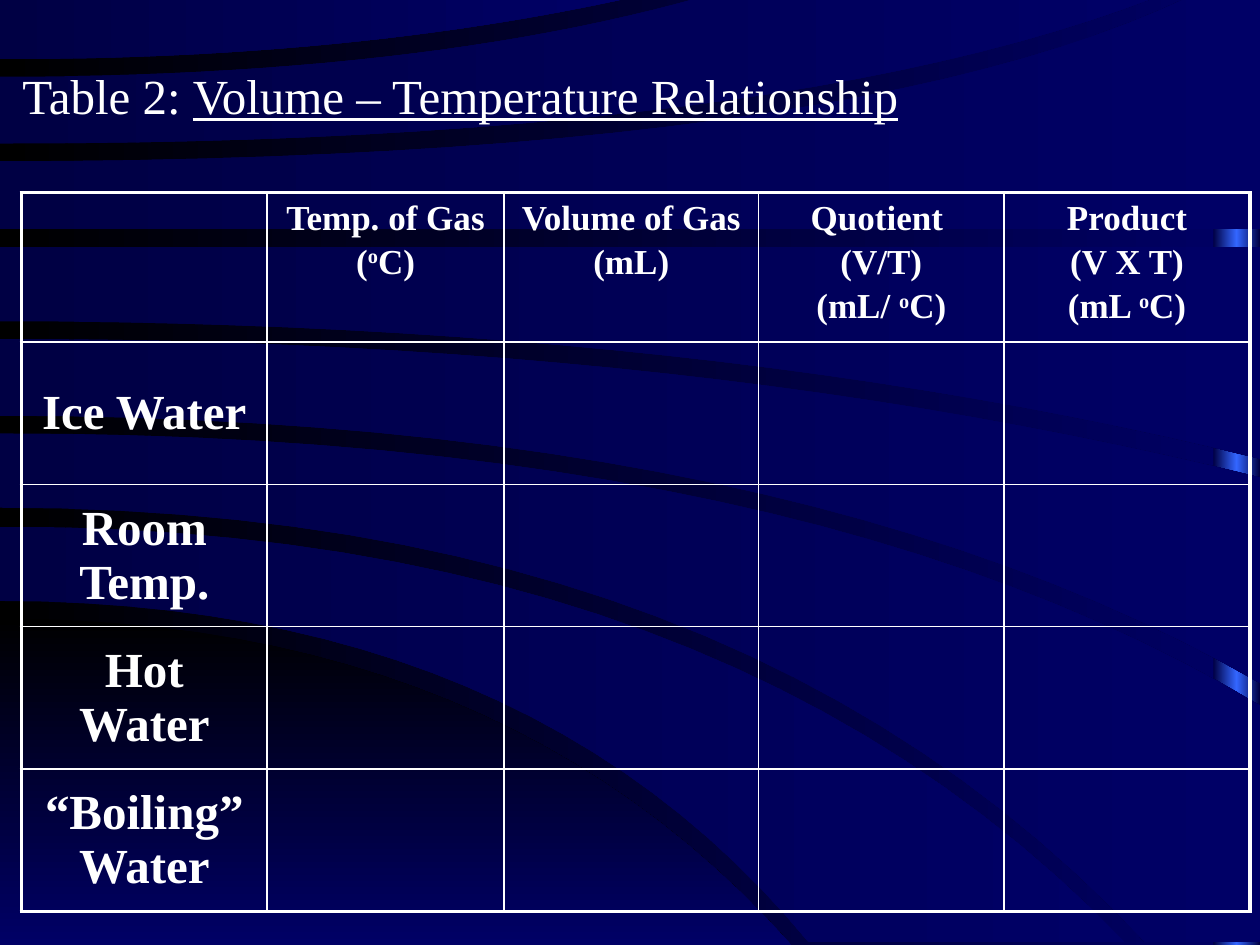
from copy import deepcopy
from dataclasses import dataclass
from typing import NamedTuple

from lxml.etree import SubElement
from pptx import Presentation
from pptx.dml.color import RGBColor as RGB
from pptx.enum.shapes import MSO_SHAPE as Shape
from pptx.enum.text import MSO_ANCHOR as Anchor, PP_ALIGN as Align
from pptx.oxml.ns import qn
from pptx.util import Inches, Pt


@dataclass(frozen=True)
class Theme:
    font: str = "Times New Roman"
    text: str = "FFFFFF"
    black: str = "000000"
    navy: str = "000066"
    dark: str = "000044"
    glow: str = "3366FF"
    large: int = 28
    small: int = 20
    outer_line: float = 2.25
    inner_line: float = 1


THEME = Theme()
WIDTH, HEIGHT = 10, 7.5
TOP = -0.02
ARC_STEPS = 24


class Arc(NamedTuple):
    """A curve that leaves the left slide edge level and bends at bend_x."""
    start_y: float
    bend_x: float
    end_x: float
    end_y: float

    def points(self) -> list[tuple[int, int]]:
        result = []
        for step in range(ARC_STEPS + 1):
            t = step / ARC_STEPS
            x = 2 * t * (1 - t) * self.bend_x + t * t * self.end_x
            y = self.start_y + t * t * (self.end_y - self.start_y)
            result.append((Inches(x), Inches(y)))
        return result


def level(y: float, end_x: float) -> Arc:
    return Arc(y, end_x / 2, end_x, y)


@dataclass(frozen=True)
class Band:
    """A swoosh of the background between two arcs."""
    upper: Arc
    lower: Arc
    colors: tuple[str, ...] = (THEME.dark, THEME.navy)
    angle: int = 0
    fills_corner: bool = False


BANDS = [
    Band(Arc(4.91, 3.98, 6.28, HEIGHT), level(HEIGHT, 6.28), (THEME.black, THEME.navy), 270),
    Band(Arc(4.18, 5.76, 8.93, 7.48), Arc(4.77, 4.19, 6.42, 7.48)),
    Band(Arc(3.44, 6.4, WIDTH, 5.6), Arc(4.03, 5.88, 9.09, 7.48), fills_corner=True),
    Band(Arc(2.69, 5.56, WIDTH, 3.79), Arc(3.3, 6.3, WIDTH, 5.42)),
    Band(level(1.96, WIDTH), Arc(2.55, 5.6, WIDTH, 3.64)),
    Band(Arc(1.28, 6.68, 9.43, TOP), level(1.82, WIDTH), fills_corner=True),
    Band(Arc(0.61, 3.32, 5.56, TOP), Arc(1.14, 6.16, 9.17, TOP)),
    Band(level(TOP, 5.01), Arc(0.47, 2.8, 5.01, TOP)),
]

# Table content: lines of a heading, where ^ stands before a raised letter
HEADINGS = [
    [],
    ["Temp. of Gas", "(^oC)"],
    ["Volume of Gas", "(mL)"],
    ["Quotient ", "(V/T)", "(mL/ ^oC)"],
    ["Product", "(V X T)", "(mL ^oC)"],
]
CONDITIONS = ["Ice Water", "Room Temp.", "Hot Water", "“Boiling” Water"]
COLUMN_WIDTHS = [1.95, 1.88, 2.02, 1.95, 1.95]
ROW_HEIGHT = 1.13


def set_gradient(fill, colors: tuple[str, ...], angle: int = 0) -> None:
    fill.gradient()
    fill.gradient_angle = angle
    first = fill.gradient_stops[0]._gs
    for _ in colors[2:]:
        first.addnext(deepcopy(first))
    for i, (stop, color) in enumerate(zip(fill.gradient_stops, colors)):
        stop.position = i / (len(colors) - 1)
        stop.color.rgb = RGB.from_string(color)


def finish_shape(shape, colors: tuple[str, ...], angle: int = 0) -> None:
    set_gradient(shape.fill, colors, angle)
    shape.line.fill.background()
    shape.shadow.inherit = False


def draw_band(slide, band: Band) -> None:
    corner_y = min(band.upper.end_y, band.lower.end_y)
    if band.lower.end_x < WIDTH:
        corner_y = band.lower.end_y
    corner = [(Inches(WIDTH), Inches(corner_y))] if band.fills_corner else []
    start, *rest = band.upper.points() + corner + band.lower.points()[::-1]
    builder = slide.shapes.build_freeform(*start)
    builder.add_line_segments(rest, close=True)
    finish_shape(builder.convert_to_shape(), band.colors, band.angle)


def add_run(paragraph, text: str, size: int, **extra: bool):
    run = paragraph.add_run()
    run.text = text
    font_format = {"name": THEME.font, "size": Pt(size), **extra}
    for attribute, value in font_format.items():
        setattr(run.font, attribute, value)
    run.font.color.rgb = RGB.from_string(THEME.text)
    return run


def write_cell(cell, lines: list[str], size: int) -> None:
    frame = cell.text_frame
    for i, line in enumerate(lines):
        paragraph = frame.add_paragraph() if i else frame.paragraphs[0]
        paragraph.alignment = Align.CENTER
        paragraph.space_before = Pt(3 if i else 0)
        before, raised, after = line.partition("^")
        add_run(paragraph, before, size, bold=True)
        if raised:
            letter = add_run(paragraph, after[0], size, bold=True)
            letter.font._element.set("baseline", "30000")
            add_run(paragraph, after[1:], size, bold=True)


def set_borders(cell, outer: dict[str, bool]) -> None:
    properties = cell._tc.get_or_add_tcPr()
    for side, is_outer in outer.items():
        width = THEME.outer_line if is_outer else THEME.inner_line
        line = SubElement(properties, qn(f"a:ln{side}"), w=str(Pt(width)))
        SubElement(SubElement(line, qn("a:solidFill")), qn("a:srgbClr"), val=THEME.text)


def draw_table(slide) -> None:
    row_count, column_count = len(CONDITIONS) + 1, len(HEADINGS)
    table = slide.shapes.add_table(
        row_count, column_count, Inches(0.17), Inches(1.53),
        Inches(sum(COLUMN_WIDTHS)), Inches(ROW_HEIGHT * row_count)).table
    table.first_row = table.horz_banding = False
    for column, width in zip(table.columns, COLUMN_WIDTHS):
        column.width = Inches(width)
    for r, row in enumerate(table.rows):
        row.height = Inches(ROW_HEIGHT)
        for c, cell in enumerate(row.cells):
            set_borders(cell, {"L": c == 0, "R": c == column_count - 1,
                               "T": r == 0, "B": r == row_count - 1})
            cell.fill.background()
            if r == 0:
                write_cell(cell, HEADINGS[c], THEME.small)
            elif c == 0:
                cell.vertical_anchor = Anchor.MIDDLE
                write_cell(cell, [CONDITIONS[r - 1]], THEME.large)


def main() -> None:
    deck = Presentation()
    deck.slide_width, deck.slide_height = Inches(WIDTH), Inches(HEIGHT)
    slide = deck.slides.add_slide(deck.slide_layouts[6])

    # Background: gradient, glowing right edge, swooshes
    set_gradient(slide.background.fill, (THEME.black, THEME.navy))
    edge = slide.shapes.add_shape(
        Shape.RECTANGLE, Inches(9.63), 0, Inches(0.37), Inches(HEIGHT))
    finish_shape(edge, (THEME.dark, THEME.glow, THEME.dark))
    for band in BANDS:
        draw_band(slide, band)

    # Title
    title = slide.shapes.add_textbox(
        Inches(0.08), Inches(0.25), Inches(8.5), Inches(1)).text_frame
    title.word_wrap = True
    title.vertical_anchor = Anchor.MIDDLE
    add_run(title.paragraphs[0], "Table 2: ", THEME.large)
    add_run(title.paragraphs[0], "Volume – Temperature Relationship", THEME.large, underline=True)

    # Results table
    draw_table(slide)
    deck.save("out.pptx")


if __name__ == "__main__":
    main()
